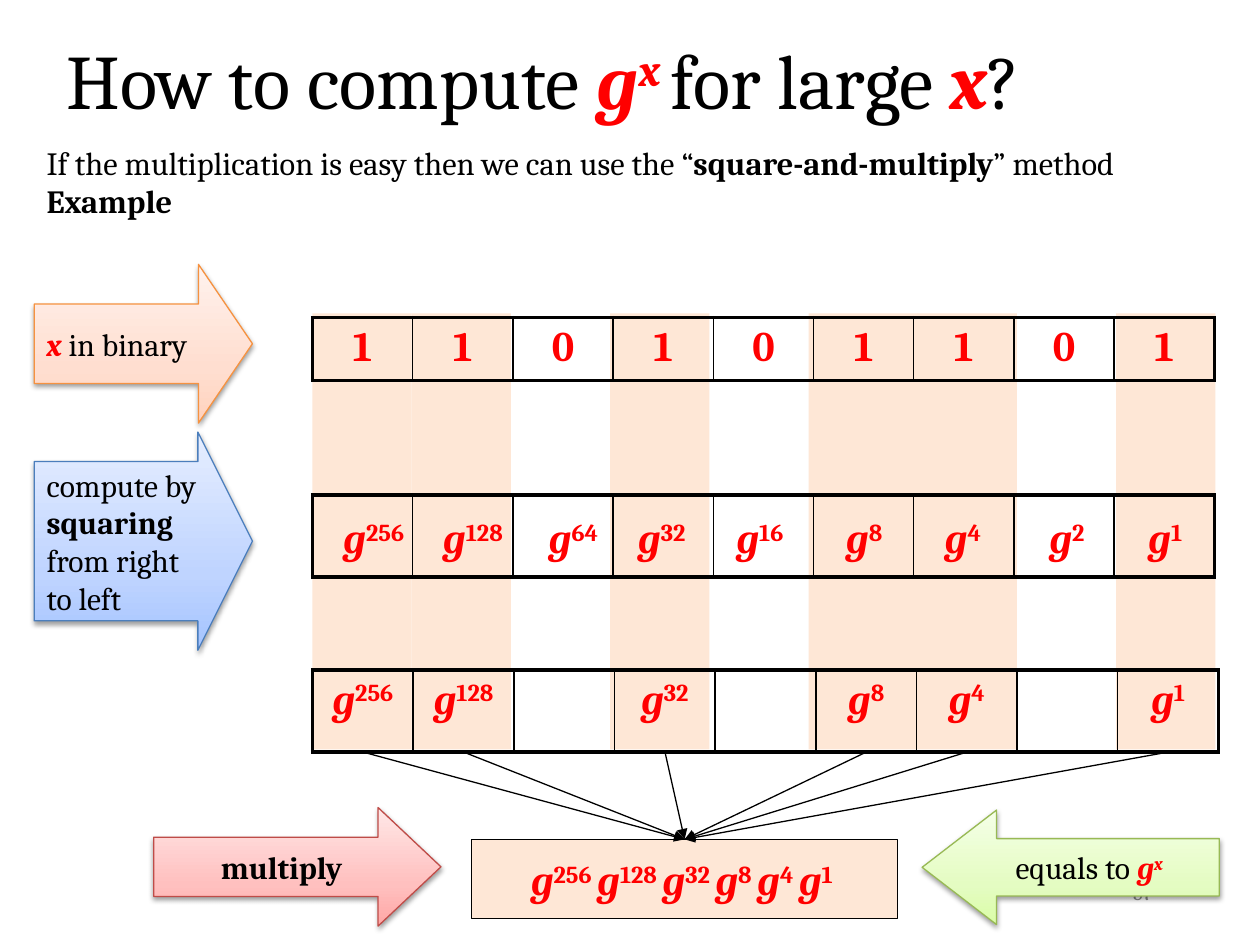
"""Build the slide on square-and-multiply exponentiation."""
from lxml.etree import SubElement
from pptx import Presentation
from pptx.dml.color import RGBColor
from pptx.enum.shapes import MSO_CONNECTOR, MSO_SHAPE
from pptx.enum.text import MSO_ANCHOR, PP_ALIGN
from pptx.oxml import parse_xml
from pptx.oxml.ns import nsdecls, qn
from pptx.util import Cm, Pt

BLACK = RGBColor(0x00, 0x00, 0x00)
RED = RGBColor(0xFF, 0x00, 0x00)
GRAY = RGBColor(0x8C, 0x8C, 0x8C)
PEACH = RGBColor(0xFE, 0xE7, 0xD6)
ORANGE_EDGE = RGBColor(0xF6, 0x92, 0x40)
ORANGE_STOPS = RGBColor(0xFF, 0xD2, 0xBD), RGBColor(0xFF, 0xDE, 0xD0), RGBColor(0xFF, 0xF2, 0xED)
BLUE_EDGE = RGBColor(0x4B, 0x7E, 0xBC)
BLUE_STOPS = RGBColor(0xA4, 0xC4, 0xFF), RGBColor(0xBF, 0xD4, 0xFF), RGBColor(0xE6, 0xEE, 0xFF)
PINK_EDGE = RGBColor(0xBF, 0x4C, 0x48)
PINK_STOPS = RGBColor(0xFF, 0xA6, 0xA5), RGBColor(0xFF, 0xC0, 0xBF), RGBColor(0xFF, 0xE7, 0xE7)
GREEN_EDGE = RGBColor(0x98, 0xB9, 0x55)
GREEN_STOPS = RGBColor(0xDA, 0xFD, 0xA7), RGBColor(0xE4, 0xFC, 0xC2), RGBColor(0xF5, 0xFF, 0xE7)

LEFT, CENTER, RIGHT = PP_ALIGN.LEFT, PP_ALIGN.CENTER, PP_ALIGN.RIGHT


def write(paragraph, runs, size, alignment=LEFT, before=0, color=BLACK):
    """Add runs whose style letters mean red, bold, italic and ^ superscript."""
    paragraph.alignment = alignment
    paragraph.space_before = Pt(before)
    for text, style in runs:
        if text == "\n":
            paragraph.add_line_break()
            continue
        run = paragraph.add_run()
        run.text = text
        run.font.name = "Cambria"
        run.font.size = Pt(size)
        run.font.bold = "b" in style
        run.font.italic = "i" in style
        run.font.color.rgb = RED if "r" in style else color
        if "^" in style:
            run._r.get_or_add_rPr().set("baseline", "30000")


def power(exponent, gap=""):
    """Return the runs for g raised to the exponent."""
    return [("g", "rbi"), (f"{exponent}{gap}", "rb^")]


presentation = Presentation()
presentation.slide_width = Cm(25.4)
presentation.slide_height = Cm(19.05)
slide = presentation.slides.add_slide(presentation.slide_layouts[6])
shapes = slide.shapes

page_number = shapes.add_textbox(Cm(18.21), Cm(17.35), Cm(5.28), Cm(1.27)).text_frame
page_number.word_wrap = True
page_number.vertical_anchor = MSO_ANCHOR.MIDDLE
write(page_number.paragraphs[0], [("57", "")], 12, RIGHT, color=GRAY)

for left, width in [(6.3, 2), (8.3, 2), (12.3, 2), (16.3, 2.21), (18.5, 2), (22.5, 2)]:
    band = shapes.add_shape(MSO_SHAPE.RECTANGLE, Cm(left), Cm(6.32), Cm(width), Cm(8.79))
    band.shadow.inherit = False
    band.fill.solid()
    band.fill.fore_color.rgb = PEACH
    band.line.fill.background()

title = shapes.add_textbox(Cm(1.09), Cm(0), Cm(22.78), Cm(3.18)).text_frame
title.word_wrap = True
title.vertical_anchor = MSO_ANCHOR.MIDDLE
write(title.paragraphs[0], [
    ("How to compute ", ""), ("g", "rbi"), ("x ", "rbi^"),
    ("for large ", ""), ("x", "rbi"), ("?", ""),
], 44)

body = shapes.add_textbox(Cm(0.69), Cm(2.92), Cm(23.01), Cm(2.39)).text_frame
body.word_wrap = True
introduction = [
    ("If the multiplication is easy then we can use the “", ""),
    ("square-and-multiply", "b"), ("” method", ""),
]
for paragraph, runs in [(body.paragraphs[0], introduction),
                        (body.add_paragraph(), [("Example", "b")])]:
    paragraph.line_spacing = 0.8
    write(paragraph, runs, 18.5, before=3.7)

bits = "110101101"
exponents = [2 ** place for place in reversed(range(len(bits)))]
chosen = [exponent for bit, exponent in zip(bits, exponents) if bit == "1"]
table_left, product_column = 6.3, 2.03
bit_row = [[(bit, "rb")] for bit in bits]
product_row = [power(exponent) if exponent in chosen else [] for exponent in exponents]

for top, height, column_width, contents in [
    (6.4, 1.22, 2.02, bit_row),
    (9.98, 1.65, 2.02, [[] for _ in bits]),
    (13.51, 1.65, product_column, product_row),
]:
    table = shapes.add_table(1, len(bits), Cm(table_left), Cm(top),
                             Cm(column_width * len(bits)), Cm(height)).table
    table.first_row = table.horz_banding = False
    for column, runs in enumerate(contents):
        table.columns[column].width = Cm(column_width)
        cell = table.cell(0, column)
        cell.fill.background()
        write(cell.text_frame.paragraphs[0], runs, 24, CENTER, before=4.8)
        borders = {
            "L": 2.25 if column == 0 else 1,
            "R": 2.25 if column == len(bits) - 1 else 1,
            "T": 2.25,
            "B": 2.25,
        }
        for index, (side, weight) in enumerate(borders.items()):
            cell._tc.get_or_add_tcPr().insert(index, parse_xml(
                f'<a:ln{side} {nsdecls("a")} w="{Pt(weight)}"><a:solidFill>'
                f'<a:srgbClr val="{BLACK}"/></a:solidFill></a:ln{side}>'))

power_lefts = [6.53, 8.53, 10.72, 12.5, 14.48, 16.76, 18.75, 20.85, 22.83]
power_widths = {1: 1.32, 2: 1.68, 3: 2.01}
for left, exponent in zip(power_lefts, exponents):
    width = power_widths[len(str(exponent))]
    label = shapes.add_textbox(Cm(left), Cm(10.19), Cm(width), Cm(1.27)).text_frame
    label.word_wrap = False
    write(label.paragraphs[0], power(exponent), 24, CENTER, before=4.8)

product = shapes.add_shape(MSO_SHAPE.RECTANGLE, Cm(9.5), Cm(16.92), Cm(8.6), Cm(1.6))
product.shadow.inherit = False
product.fill.solid()
product.fill.fore_color.rgb = PEACH
product.line.color.rgb = BLACK
product.line.width = Pt(0.75)
product.text_frame.word_wrap = False
product.text_frame.vertical_anchor = MSO_ANCHOR.MIDDLE
factors = [run for exponent in chosen for run in power(exponent, " ")]
write(product.text_frame.paragraphs[0], factors, 24, CENTER)

for exponent in chosen:
    start = table_left + (exponents.index(exponent) + 0.5) * product_column
    connector = shapes.add_connector(MSO_CONNECTOR.STRAIGHT, Cm(start), Cm(15.16),
                                     Cm(13.8), Cm(16.92))
    connector.line.color.rgb = BLACK
    connector.line.width = Pt(0.75)
    SubElement(connector.line._get_or_add_ln(), qn("a:tailEnd"), type="triangle")
    SubElement(connector.element.spPr, qn("a:effectLst"))

arrows = [
    (MSO_SHAPE.RIGHT_ARROW, (0.69, 5.33, 4.4, 3.2), (0.5, 0.34), ORANGE_EDGE, ORANGE_STOPS,
     LEFT, [("x ", "rbi"), ("in binary", "")]),
    (MSO_SHAPE.RIGHT_ARROW, (0.69, 8.71, 4.4, 4.4), (0.73, 0.25), BLUE_EDGE, BLUE_STOPS,
     LEFT, [("compute by", ""), ("\n", ""), ("squaring", "b"), ("\n", ""),
            ("from right ", ""), ("\n", ""), ("to left", "")]),
    (MSO_SHAPE.RIGHT_ARROW, (3.1, 16.28, 5.79, 2.39), (0.5, 0.53), PINK_EDGE, PINK_STOPS,
     CENTER, [("multiply", "b")]),
    (MSO_SHAPE.LEFT_ARROW, (18.59, 16.33, 5.99, 2.31), (0.5, 0.65), GREEN_EDGE, GREEN_STOPS,
     CENTER, [("equals to ", ""), ("g", "rbi"), ("x", "rbi^")]),
]
for kind, box, adjustments, edge, colors, alignment, runs in arrows:
    arrow = shapes.add_shape(kind, *map(Cm, box))
    for index, adjustment in enumerate(adjustments):
        arrow.adjustments[index] = adjustment
    arrow.line.color.rgb = edge
    arrow.line.width = Pt(0.75)
    stops = "".join(
        f'<a:gs pos="{position}"><a:srgbClr val="{color}"/></a:gs>'
        for position, color in zip((0, 35000, 100000), colors))
    arrow.element.spPr.insert(2, parse_xml(
        f'<a:gradFill {nsdecls("a")} rotWithShape="1"><a:gsLst>{stops}</a:gsLst>'
        '<a:lin ang="16200000" scaled="0"/></a:gradFill>'))
    arrow.element.spPr.append(parse_xml(
        f'<a:effectLst {nsdecls("a")}><a:outerShdw blurRad="{Pt(3.1)}" dist="{Pt(1.6)}" '
        f'dir="5400000" rotWithShape="0"><a:srgbClr val="{BLACK}">'
        '<a:alpha val="38000"/></a:srgbClr></a:outerShdw></a:effectLst>'))
    arrow.text_frame.word_wrap = False
    arrow.text_frame.vertical_anchor = MSO_ANCHOR.MIDDLE
    write(arrow.text_frame.paragraphs[0], runs, 18, alignment)

presentation.save("out.pptx")
